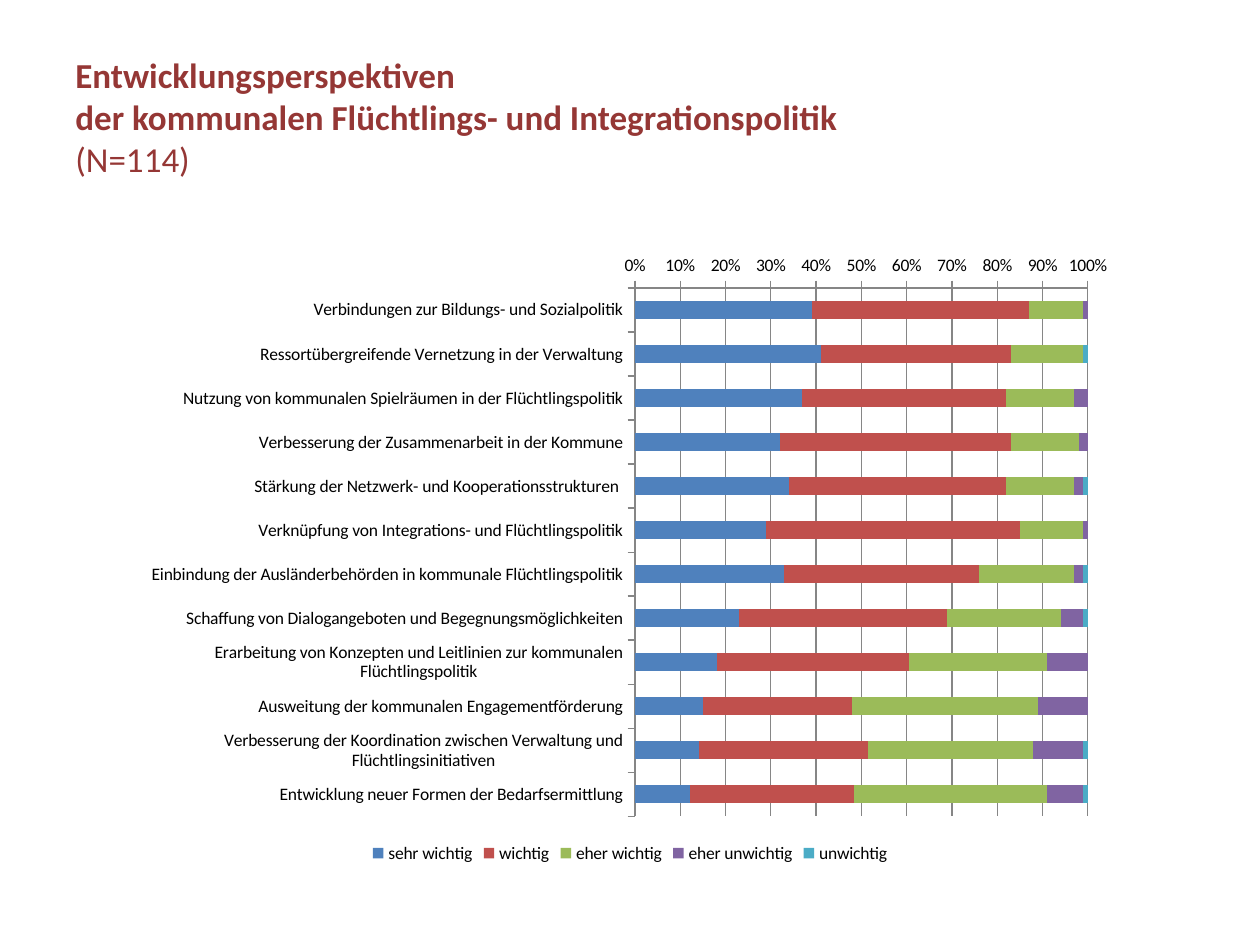
from dataclasses import dataclass

from lxml.etree import SubElement
from pptx import Presentation
from pptx.chart.chart import Chart
from pptx.chart.data import CategoryChartData
from pptx.dml.color import RGBColor
from pptx.enum.chart import XL_CHART_TYPE, XL_LEGEND_POSITION, XL_TICK_MARK
from pptx.enum.text import MSO_ANCHOR
from pptx.oxml.ns import qn
from pptx.util import Inches, Pt


@dataclass(frozen=True)
class Theme:
    font: str = "Calibri"
    title: RGBColor = RGBColor(0x95, 0x37, 0x35)
    text: RGBColor = RGBColor(0, 0, 0)
    line: RGBColor = RGBColor(0x86, 0x86, 0x86)
    big: Pt = Pt(20)
    small: Pt = Pt(10)
    thin: Pt = Pt(0.75)


@dataclass(frozen=True)
class Answer:
    name: str
    color: str
    vals: tuple[int, ...]


THEME = Theme()
TOPICS = (
    "Verbindungen zur Bildungs- und Sozialpolitik",
    "Ressortübergreifende Vernetzung in der Verwaltung",
    "Nutzung von kommunalen Spielräumen in der Flüchtlingspolitik",
    "Verbesserung der Zusammenarbeit in der Kommune",
    "Stärkung der Netzwerk- und Kooperationsstrukturen ",
    "Verknüpfung von Integrations- und Flüchtlingspolitik",
    "Einbindung der Ausländerbehörden in kommunale Flüchtlingspolitik",
    "Schaffung von Dialogangeboten und Begegnungsmöglichkeiten",
    "Erarbeitung von Konzepten und Leitlinien zur kommunalen Flüchtlingspolitik",
    "Ausweitung der kommunalen Engagementförderung",
    "Verbesserung der Koordination zwischen Verwaltung und Flüchtlingsinitiativen",
    "Entwicklung neuer Formen der Bedarfsermittlung",
)
ANSWERS = (
    Answer("sehr wichtig", "4F81BD", (39, 41, 37, 32, 34, 29, 33, 23, 18, 15, 14, 12)),
    Answer("wichtig", "C0504D", (48, 42, 45, 51, 48, 56, 43, 46, 42, 33, 37, 36)),
    Answer("eher wichtig", "9BBB59", (12, 16, 15, 15, 15, 14, 21, 25, 30, 41, 36, 42)),
    Answer("eher unwichtig", "8064A2", (1, 0, 3, 2, 2, 1, 2, 5, 9, 11, 11, 8)),
    Answer("unwichtig", "4BACC6", (0, 1, 0, 0, 1, 0, 1, 1, 0, 0, 1, 1)),
)


def add_title(slide) -> None:
    box = slide.shapes.add_textbox(Inches(0.5), Inches(0.3), Inches(9), Inches(1.25))
    frame = box.text_frame
    frame.word_wrap = True
    frame.vertical_anchor = MSO_ANCHOR.MIDDLE
    para = frame.paragraphs[0]
    lines = (
        ("Entwicklungsperspektiven", True),
        ("der kommunalen Flüchtlings- und Integrationspolitik", True),
        ("(N=114)", False),
    )
    for row, (text, bold) in enumerate(lines):
        if row:
            para.add_line_break()
        run = para.add_run()
        run.text = text
        font = run.font
        font.name, font.size, font.bold = THEME.font, THEME.big, bold
        font.color.rgb = THEME.title


def set_line(line) -> None:
    line.color.rgb = THEME.line
    line.width = THEME.thin


def set_plot(chart: Chart, **sides: float) -> None:
    """Fix the inner plot area as fractions of the chart."""
    area = chart.plots[0]._element.getparent()
    for old in area.findall(qn("c:layout")):
        area.remove(old)
    layout = SubElement(area, qn("c:layout"))
    area.insert(0, layout)
    manual = SubElement(layout, qn("c:manualLayout"))
    items = {"layoutTarget": "inner", "xMode": "edge", "yMode": "edge", **sides}
    for tag, val in items.items():
        SubElement(manual, qn(f"c:{tag}")).set("val", str(val))


def add_bars(slide) -> None:
    data = CategoryChartData()
    data.categories = TOPICS
    for item in ANSWERS:
        data.add_series(item.name, item.vals)
    chart = slide.shapes.add_chart(
        XL_CHART_TYPE.BAR_STACKED_100,
        Inches(1.05), Inches(1.94), Inches(7.9), Inches(4.95), data,
    ).chart
    chart.has_title = False
    chart.font.name, chart.font.size = THEME.font, THEME.small
    chart.font.color.rgb = THEME.text

    # Bars
    plot = chart.plots[0]
    plot.gap_width, plot.overlap = 150, 100
    plot.vary_by_categories = False
    for series, item in zip(plot.series, ANSWERS):
        series.format.fill.solid()
        series.format.fill.fore_color.rgb = RGBColor.from_string(item.color)

    # Axes
    for axis in (chart.category_axis, chart.value_axis):
        axis.major_tick_mark = XL_TICK_MARK.OUTSIDE
        axis.minor_tick_mark = XL_TICK_MARK.NONE
        set_line(axis.format.line)
    chart.category_axis.reverse_order = True
    scale = chart.value_axis
    scale.has_major_gridlines = True
    set_line(scale.major_gridlines.format.line)
    scale.tick_labels.number_format = "0%"
    scale.tick_labels.number_format_is_linked = False

    # Legend
    chart.has_legend = True
    chart.legend.position = XL_LEGEND_POSITION.BOTTOM
    chart.legend.include_in_layout = False
    set_plot(chart, x=0.505, y=0.07, w=0.455, h=0.847)


def main() -> None:
    deck = Presentation()
    deck.slide_width, deck.slide_height = Inches(10), Inches(7.5)
    slide = deck.slides.add_slide(deck.slide_layouts[6])
    add_title(slide)
    add_bars(slide)
    deck.save("out.pptx")


if __name__ == "__main__":
    main()
